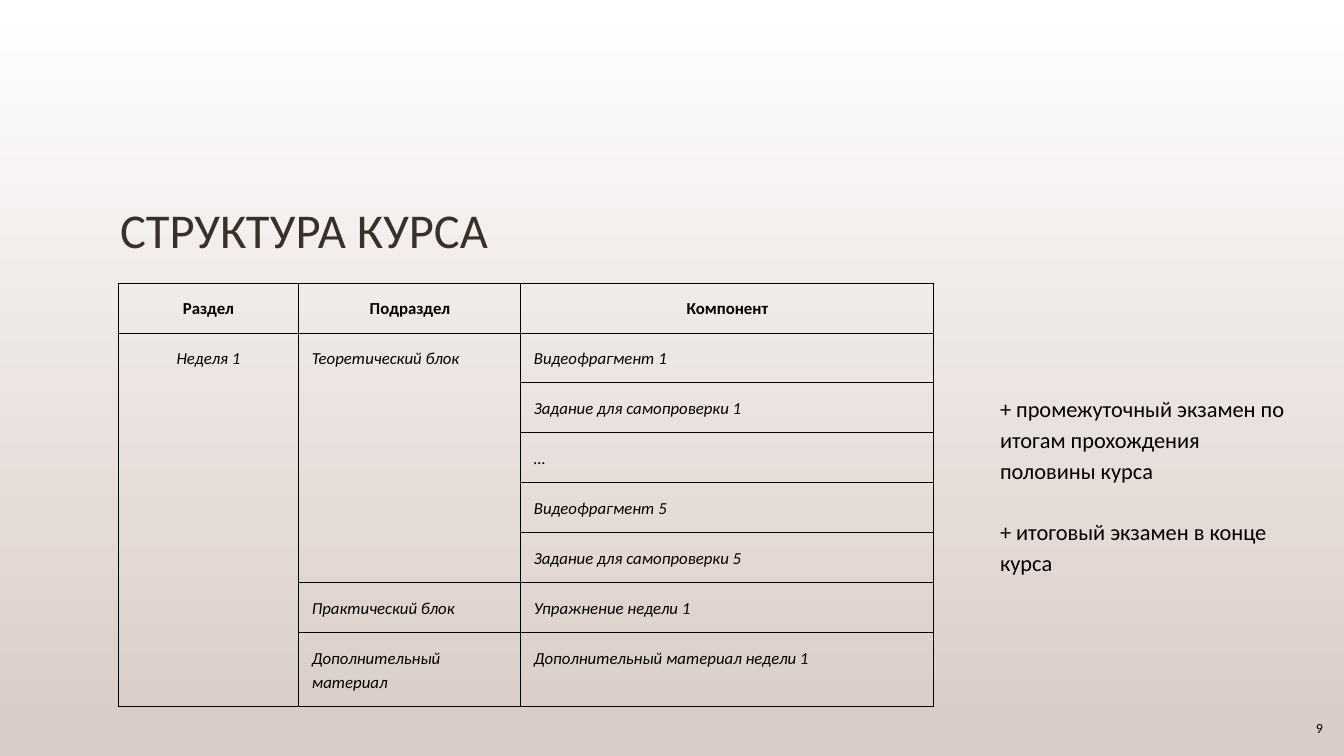
from lxml import etree
from pptx import Presentation, util as u
from pptx.dml.color import RGBColor
from pptx.enum import text
from pptx.oxml import ns

COLORS = {"ink": "000000", "title": "39302A", "top": "FFFFFF", "bottom": "D9CBC5"}
SCALE = 914400 / 100.8
INSET = 13
LEFT, CENTER, RIGHT = text.PP_ALIGN.LEFT, text.PP_ALIGN.CENTER, text.PP_ALIGN.RIGHT


def px(count):
    return u.Emu(round(count * SCALE))


class CoursePage:
    """Holds the style and the current slide."""

    font = "Calibri"

    def __init__(self, deck):
        self.page = deck.slides.add_slide(deck.slide_layouts[5])

    def background(self, first, last):
        fill = self.page.background.fill
        fill.gradient()
        fill.gradient_angle = 270
        for stop, color in zip(fill.gradient_stops, (first, last)):
            stop.color.rgb = RGBColor.from_string(COLORS[color])

    def paragraphs(self, frame, lines, size, color="ink", align=LEFT, spacing=1.15,
                   gap=0, **format_values):
        for index, line in enumerate(lines):
            para = frame.paragraphs[0] if index == 0 else frame.add_paragraph()
            para.alignment, para.line_spacing = align, spacing
            para.space_before = u.Pt(gap if index else 0)
            span = para.add_run()
            span.text = line
            values = {"name": self.font, "size": u.Pt(size), **format_values}
            for key, value in values.items():
                setattr(span.font, key, value)
            span.font.color.rgb = RGBColor.from_string(COLORS[color])

    def margins(self, holder):
        for side in ("left", "top", "right", "bottom"):
            setattr(holder, "margin_" + side, px(INSET))

    def frame(self, box, anchor):
        frame = box.text_frame
        self.margins(frame)
        values = {"word_wrap": True, "auto_size": text.MSO_AUTO_SIZE.NONE,
                  "vertical_anchor": anchor}
        for key, value in values.items():
            setattr(frame, key, value)
        return frame

    def title(self, line, place, **style):
        box = self.page.shapes.title
        for key, value in zip(("left", "top", "width", "height"), place):
            setattr(box, key, px(value))
        self.paragraphs(self.frame(box, text.MSO_ANCHOR.TOP), [line], **style)

    def text(self, lines, place, anchor=text.MSO_ANCHOR.TOP, **style):
        box = self.page.shapes.add_textbox(*map(px, place))
        self.paragraphs(self.frame(box, anchor), lines, **style)

    def borders(self, cell):
        properties = cell._tc.get_or_add_tcPr()
        for side in ("lnL", "lnR", "lnT", "lnB"):
            line = etree.SubElement(properties, ns.qn("a:" + side), w=str(u.Pt(0.75)))
            fill = etree.SubElement(line, ns.qn("a:solidFill"))
            etree.SubElement(fill, ns.qn("a:srgbClr"), val=COLORS["ink"])

    def table(self, rows, left, top, widths, heights, merges):
        table = self.page.shapes.add_table(
            len(rows), len(widths),
            *map(px, (left, top, sum(widths), sum(heights)))).table
        table.first_row = table.horz_banding = False
        for column, width in zip(table.columns, widths):
            column.width = px(width)
        for row, height in zip(table.rows, heights):
            row.height = px(height)
        for r, row in enumerate(rows):
            for c, label in enumerate(row):
                cell = table.cell(r, c)
                self.margins(cell)
                self.borders(cell)
                cell.fill.background()
                header = r == 0
                self.paragraphs(cell.text_frame, [label] if label else [], size=12,
                                align=CENTER if header or c == 0 else LEFT,
                                bold=header, italic=not header)
        for start, end in merges:
            table.cell(*start).merge(table.cell(*end))


def main():
    deck = Presentation()
    deck.slide_width, deck.slide_height = px(1344), px(756)
    course = CoursePage(deck)
    course.background("top", "bottom")

    # Heading
    course.title("СТРУКТУРА КУРСА", (107, 194, 1130, 79),
                 size=34.7, color="title", spacing=0.9)

    # Course structure
    rows = [
        ("Раздел", "Подраздел", "Компонент"),
        ("Неделя 1", "Теоретический блок", "Видеофрагмент 1"),
        ("", "", "Задание для самопроверки 1"),
        ("", "", "…"),
        ("", "", "Видеофрагмент 5"),
        ("", "", "Задание для самопроверки 5"),
        ("", "Практический блок", "Упражнение недели 1"),
        ("", "Дополнительный материал", "Дополнительный материал недели 1"),
    ]
    course.table(rows, 118, 283, widths=(181, 222, 413), heights=[50] * 7 + [74],
                 merges=[((1, 0), (7, 0)), ((1, 1), (5, 1))])

    # Exams
    course.text(["+ промежуточный экзамен по итогам прохождения половины курса",
                 "+ итоговый экзамен в конце курса"],
                (987, 378, 311, 159), size=16, gap=22)

    # Page number
    course.text(["9"], (1255, 699, 81, 57), text.MSO_ANCHOR.MIDDLE,
                size=10, align=RIGHT, spacing=1.0)

    deck.save("out.pptx")


if __name__ == "__main__":
    main()
